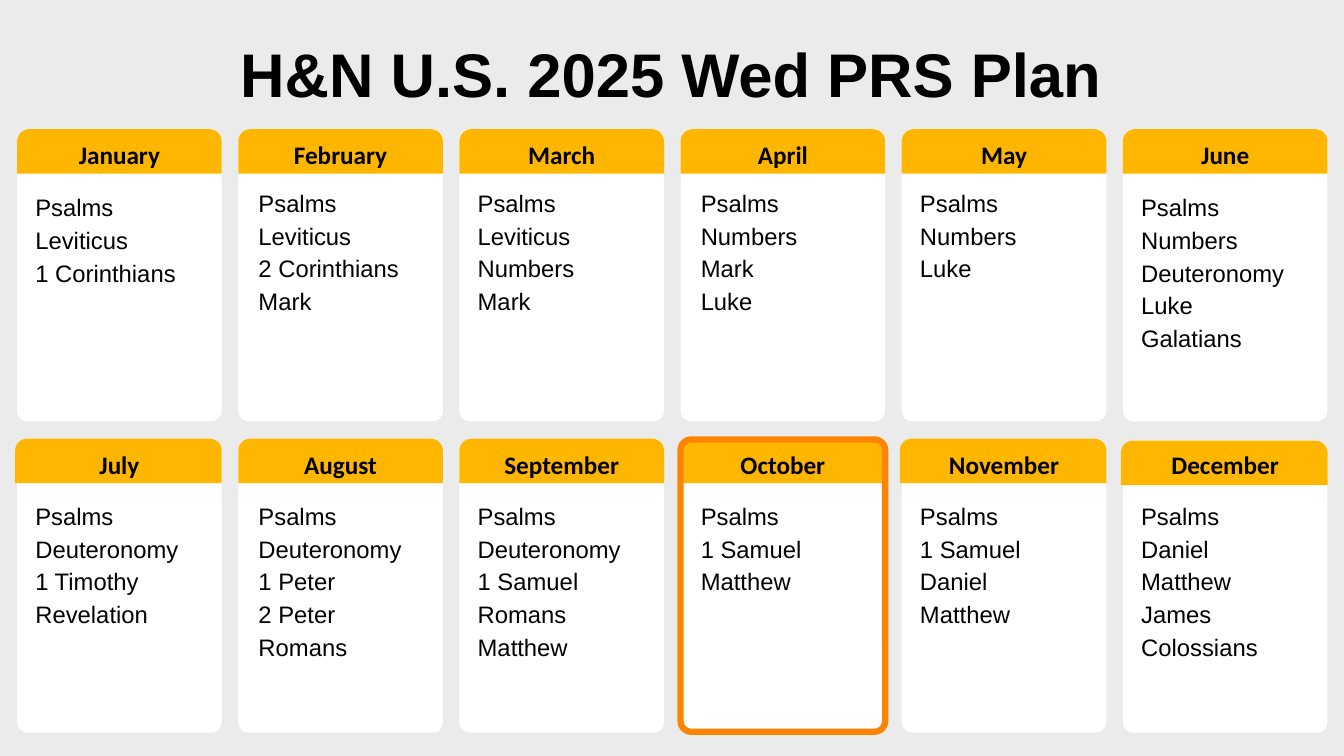
from pptx import Presentation
from pptx.dml.color import RGBColor
from pptx.enum.shapes import MSO_SHAPE
from pptx.enum.text import MSO_AUTO_SIZE, PP_ALIGN
from pptx.util import Pt

GRAY = RGBColor(0xEB, 0xEB, 0xEB)
WHITE = RGBColor(0xFF, 0xFF, 0xFF)
YELLOW = RGBColor(0xFF, 0xB6, 0x00)
ORANGE = RGBColor(0xFB, 0x85, 0x00)
BLACK = RGBColor(0x00, 0x00, 0x00)

SLIDE_W, SLIDE_H = 960, 540
COLUMNS = 6
CARD_LEFT, CARD_PITCH = 12.24, 157.97
CARD_W, CARD_H = 146.16, 208.8
HEADER_H, LABEL_H = 31.7, 21.6
CARD_TOPS = (92.2, 314.6)
HEADER_TOPS = (92.3, 313.4)
LABEL_TOPS = (99.4, 321.2)
READING_TOPS = (134.6, 358.3)
READING_W, READING_INDENT = 145.44, 14.4
LINE_PITCH, SPACE_AFTER = 23.76, 3
CORNER = 0.052
NUDGE = 1.4
CURRENT_MONTH = "October"

# Small offsets of single parts from the grid
WIDE_HEADERS = ("July", "November", "December")
LOW_HEADERS = ("December",)
LOW_READINGS = ("January", "June")
LEFT_READING_COLUMNS = (0, 2, 4, 5)

PLAN = {
    "January": ["Psalms", "Leviticus", "1 Corinthians"],
    "February": ["Psalms", "Leviticus", "2 Corinthians", "Mark"],
    "March": ["Psalms", "Leviticus", "Numbers", "Mark"],
    "April": ["Psalms", "Numbers", "Mark", "Luke"],
    "May": ["Psalms", "Numbers", "Luke"],
    "June": ["Psalms", "Numbers", "Deuteronomy", "Luke", "Galatians"],
    "July": ["Psalms", "Deuteronomy", "1 Timothy", "Revelation"],
    "August": ["Psalms", "Deuteronomy", "1 Peter", "2 Peter", "Romans"],
    "September": ["Psalms", "Deuteronomy", "1 Samuel", "Romans", "Matthew"],
    "October": ["Psalms", "1 Samuel", "Matthew"],
    "November": ["Psalms", "1 Samuel", "Daniel", "Matthew"],
    "December": ["Psalms", "Daniel", "Matthew", "James", "Colossians"],
}


def add_panel(slide, kind, left, top, width, height,
              fill=None, line=None, corners=()):
    panel = slide.shapes.add_shape(kind, Pt(left), Pt(top), Pt(width), Pt(height))
    panel.shadow.inherit = False
    for index, corner in enumerate(corners):
        panel.adjustments[index] = corner
    if fill is None:
        panel.fill.background()
    else:
        panel.fill.solid()
        panel.fill.fore_color.rgb = fill
    if line is None:
        panel.line.fill.background()
    else:
        panel.line.color.rgb = line
        panel.line.width = Pt(4.5)


def add_text(slide, lines, left, top, width, height, size,
             font="Arial", bold=False, align=PP_ALIGN.CENTER,
             indent=0, space_after=None):
    box = slide.shapes.add_textbox(Pt(left), Pt(top), Pt(width), Pt(height))
    frame = box.text_frame
    frame.word_wrap = True
    frame.auto_size = MSO_AUTO_SIZE.SHAPE_TO_FIT_TEXT
    frame.margin_left = Pt(indent)
    frame.margin_top = frame.margin_right = frame.margin_bottom = 0
    frame.text = "\n".join(lines)
    for paragraph in frame.paragraphs:
        paragraph.alignment = align
        if space_after is not None:
            paragraph.space_after = Pt(space_after)
        paragraph.font.name = font
        paragraph.font.size = Pt(size)
        paragraph.font.bold = bold
        paragraph.font.color.rgb = BLACK


def add_month(slide, month, books, row, column):
    left = CARD_LEFT + column * CARD_PITCH
    # Card and header band
    add_panel(slide, MSO_SHAPE.ROUNDED_RECTANGLE, left, CARD_TOPS[row],
              CARD_W, CARD_H, fill=WHITE, corners=[CORNER])
    extra = NUDGE if month in WIDE_HEADERS else 0
    drop = NUDGE if month in LOW_HEADERS else 0
    add_panel(slide, MSO_SHAPE.ROUND_2_SAME_RECTANGLE, left - extra,
              HEADER_TOPS[row] + drop, CARD_W + extra, HEADER_H,
              fill=YELLOW, corners=[0.267, 0])
    # Month name and reading list
    add_text(slide, [month], left, LABEL_TOPS[row], CARD_W, LABEL_H, 18,
             font="Calibri", bold=True)
    shift = NUDGE if column in LEFT_READING_COLUMNS else 0
    drop = 3 if month in LOW_READINGS else 0
    add_text(slide, books, left - shift, READING_TOPS[row] + drop, READING_W,
             len(books) * LINE_PITCH - SPACE_AFTER, 17, align=PP_ALIGN.LEFT,
             indent=READING_INDENT, space_after=SPACE_AFTER)


def main():
    deck = Presentation()
    deck.slide_width, deck.slide_height = Pt(SLIDE_W), Pt(SLIDE_H)
    slide = deck.slides.add_slide(deck.slide_layouts[6])

    # Backdrop and title
    add_panel(slide, MSO_SHAPE.RECTANGLE, 0, 0, SLIDE_W, SLIDE_H, fill=GRAY)
    add_text(slide, ["H&N U.S. 2025 Wed PRS Plan"], 18, 26, 923, 53.3, 44, bold=True)

    # Twelve months in two rows
    for index, (month, books) in enumerate(PLAN.items()):
        row, column = divmod(index, COLUMNS)
        add_month(slide, month, books, row, column)

    # Frame around the current month
    row, column = divmod(list(PLAN).index(CURRENT_MONTH), COLUMNS)
    add_panel(slide, MSO_SHAPE.ROUNDED_RECTANGLE, CARD_LEFT + column * CARD_PITCH,
              CARD_TOPS[row] - 0.7, CARD_W, CARD_H, line=ORANGE, corners=[CORNER])

    deck.save("out.pptx")


if __name__ == "__main__":
    main()
